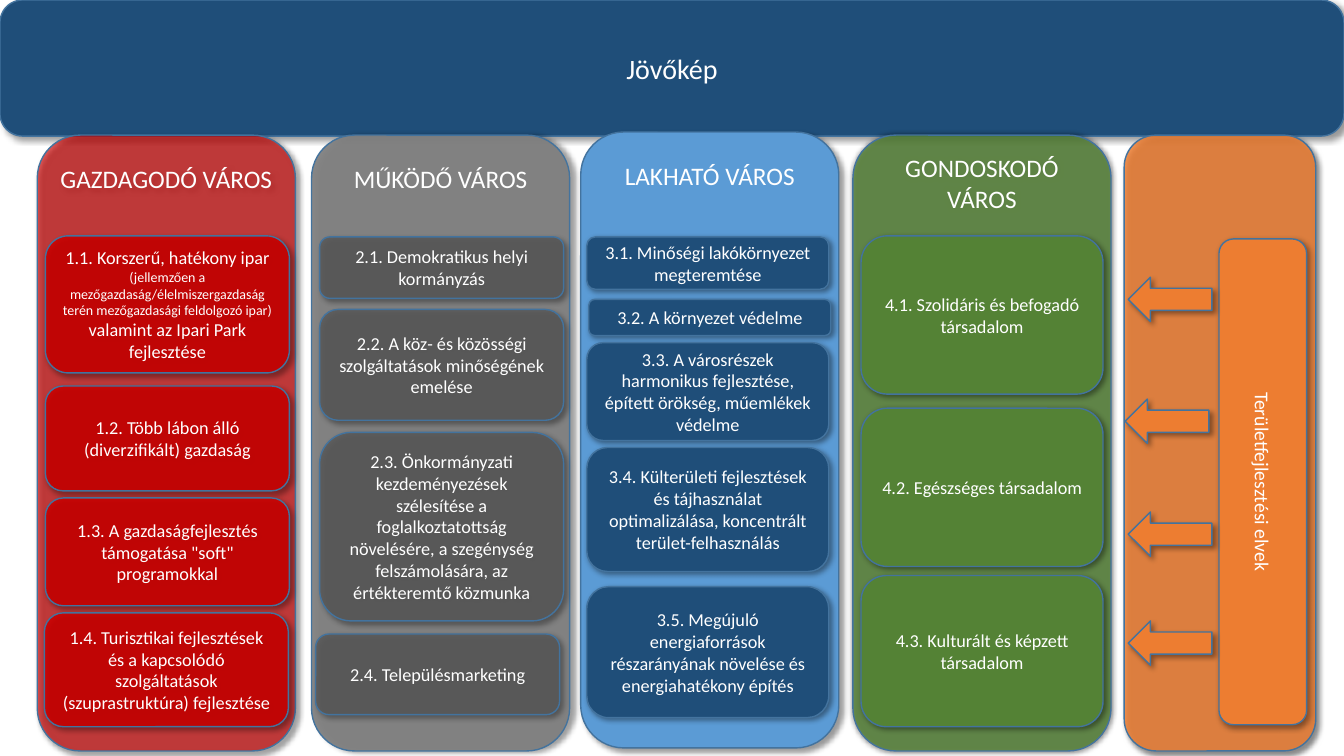
from lxml import etree
from pptx import Presentation
from pptx.dml.color import RGBColor
from pptx.enum.shapes import MSO_SHAPE
from pptx.enum.text import MSO_ANCHOR, PP_ALIGN
from pptx.oxml.ns import qn
from pptx.util import Emu, Pt

ROUNDED, LEFT_ARROW = MSO_SHAPE.ROUNDED_RECTANGLE, MSO_SHAPE.LEFT_ARROW
TOP, MIDDLE = MSO_ANCHOR.TOP, MSO_ANCHOR.MIDDLE
CENTER = PP_ALIGN.CENTER

EMU_PER_PX = 9144  # 100 px to the inch
NAVY, RED, GRAY, BLUE = "1F4E79", "CC0000", "808080", "5B9BD5"
DARK_GRAY, GREEN, ORANGE = "595959", "548235", "ED7D31"


def px(length):
    return Emu(length * EMU_PER_PX)


def color(code):
    return RGBColor.from_string(code)


class Board:
    font, ink, outline = "Calibri", "FFFFFF", "43739E"

    def __init__(self, deck):
        self.page = deck.slides.add_slide(deck.slide_layouts[6])

    def shape(self, kind, area, fill, opacity=100, shadow=(40, 3, 45)):
        box = self.page.shapes.add_shape(kind, *map(px, area))
        box.fill.solid()
        box.fill.fore_color.rgb = color(fill)
        if opacity < 100:
            fill_color = box._element.spPr.find(qn("a:solidFill"))[0]
            etree.SubElement(fill_color, qn("a:alpha"), val=str(opacity * 1000))
        box.line.color.rgb = color(self.outline)
        box.line.width = Pt(1)
        self.drop_shadow(box, *shadow)
        return box

    def drop_shadow(self, box, strength, distance, angle):
        box.shadow.inherit = False
        effects = box._element.spPr.find(qn("a:effectLst"))
        outer = etree.SubElement(
            effects, qn("a:outerShdw"), blurRad=str(Pt(4)), dist=str(Pt(distance)),
            dir=str(angle * 60000), algn="tl", rotWithShape="0")
        black = etree.SubElement(outer, qn("a:srgbClr"), val="000000")
        etree.SubElement(black, qn("a:alpha"), val=str(strength * 1000))

    def label(self, box, spans, size, anchor=MIDDLE, top=5, bottom=5):
        """Spans is a text, or a list of (text, size) pairs."""
        frame = box.text_frame
        frame.word_wrap = True
        frame.vertical_anchor = anchor
        frame.margin_left = frame.margin_right = px(10)
        frame.margin_top, frame.margin_bottom = px(top), px(bottom)
        para = frame.paragraphs[0]
        para.alignment = CENTER
        if isinstance(spans, str):
            spans = [(spans, size)]
        for text, points in spans:
            span = para.add_run()
            span.text = text
            span.font.name = self.font
            span.font.size = Pt(points)
            span.font.color.rgb = color(self.ink)

    def pillar(self, area, fill, opacity, shadow, title, top, bottom):
        box = self.shape(ROUNDED, area, fill, opacity, shadow)
        self.label(box, title, 18, TOP, top, bottom)

    def goal(self, area, fill, opacity, distance, spans):
        box = self.shape(ROUNDED, area, fill, opacity, (40, distance, 45))
        self.label(box, spans, 13)

    def vertical_label(self, area, fill, text):
        box = self.shape(ROUNDED, area, fill, shadow=(40, 2, 45))
        self.label(box, text, 14)
        box.text_frame._txBody.bodyPr.set("vert", "vert")


# Pillars: left, top, fill, opacity, shadow, title, text margins
PILLARS = [
    (37, 134, RED, 65, (55, 3, 45), "GAZDAGODÓ VÁROS", 16, 5),
    (309, 134, GRAY, 94, (40, 3, 5), "MŰKÖDŐ VÁROS", 16, 5),
    (576, 131, BLUE, 100, (40, 3, 45), "LAKHATÓ VÁROS", 16, 5),
    (846, 134, GREEN, 80, (55, 0, 45), "GONDOSKODÓ VÁROS", 5, 16),
]

# Goals of each pillar: width, fill, opacity, shadow distance,
# then rows of left, top, height, text
GOALS = [
    (242, RED, 85, 3, [
        (45, 234, 136, [
            ("1.1. Korszerű, hatékony ipar ", 13),
            ("(jellemzően a mezőgazdaság/élelmiszergazdaság terén "
             "mezőgazdasági feldolgozó ipar) ", 10),
            ("valamint az Ipari Park fejlesztése", 13)]),
        (45, 383, 104, "1.2. Több lábon álló (diverzifikált) gazdaság"),
        (45, 494, 107, "1.3. A gazdaságfejlesztés támogatása \"soft\" programokkal"),
        (44, 608, 113, "1.4. Turisztikai fejlesztések és a kapcsolódó "
                       "szolgáltatások (szuprastruktúra) fejlesztése"),
    ]),
    (242, DARK_GRAY, 85, 3, [
        (317, 235, 61, "2.1. Demokratikus helyi kormányzás"),
        (317, 307, 110, "2.2. A köz- és közösségi szolgáltatások "
                        "minőségének emelése"),
        (317, 429, 187, "2.3. Önkormányzati kezdeményezések szélesítése a "
                        "foglalkoztatottság növelésére, a szegénység "
                        "felszámolására, az értékteremtő közmunka"),
        (313, 629, 80, "2.4. Településmarketing"),
    ]),
    (240, NAVY, 100, 2, [
        (582, 235, 52, "3.1. Minőségi lakókörnyezet megteremtése"),
        (584, 297, 36, "3.2. A környezet védelme"),
        (582, 340, 97, "3.3. A városrészek harmonikus fejlesztése, "
                       "épített örökség, műemlékek védelme"),
        (582, 444, 123, "3.4. Külterületi fejlesztések és tájhasználat "
                        "optimalizálása, koncentrált terület-felhasználás"),
        (582, 582, 130, "3.5. Megújuló energiaforrások részarányának "
                        "növelése és energiahatékony építés"),
    ]),
    (240, GREEN, 100, 2, [
        (854, 234, 157, "4.1. Szolidáris és befogadó társadalom"),
        (854, 405, 157, "4.2. Egészséges társadalom"),
        (854, 571, 150, "4.3. Kulturált és képzett társadalom"),
    ]),
]

ARROWS = [(1119, 275), (1116, 396), (1119, 508), (1119, 616)]


def main():
    deck = Presentation()
    deck.slide_width, deck.slide_height = px(1333), px(750)
    board = Board(deck)

    # Vision banner
    banner = board.shape(ROUNDED, (0, 0, 1333, 135), NAVY)
    board.label(banner, "Jövőkép", 20)

    # Pillars and their goals
    for left, top, *style in PILLARS:
        board.pillar((left, top, 256, 611), *style)
    for width, fill, opacity, distance, rows in GOALS:
        for left, top, height, spans in rows:
            board.goal((left, top, width, height), fill, opacity, distance, spans)

    # Development principles acting on the pillars
    board.shape(ROUNDED, (1115, 134, 190, 611), ORANGE, 84, (55, 3, 45))
    board.vertical_label((1209, 237, 87, 482), ORANGE, "Területfejlesztési elvek")
    for left, top in ARROWS:
        board.shape(LEFT_ARROW, (left, top, 83, 44), ORANGE)

    deck.save("out.pptx")


if __name__ == "__main__":
    main()
